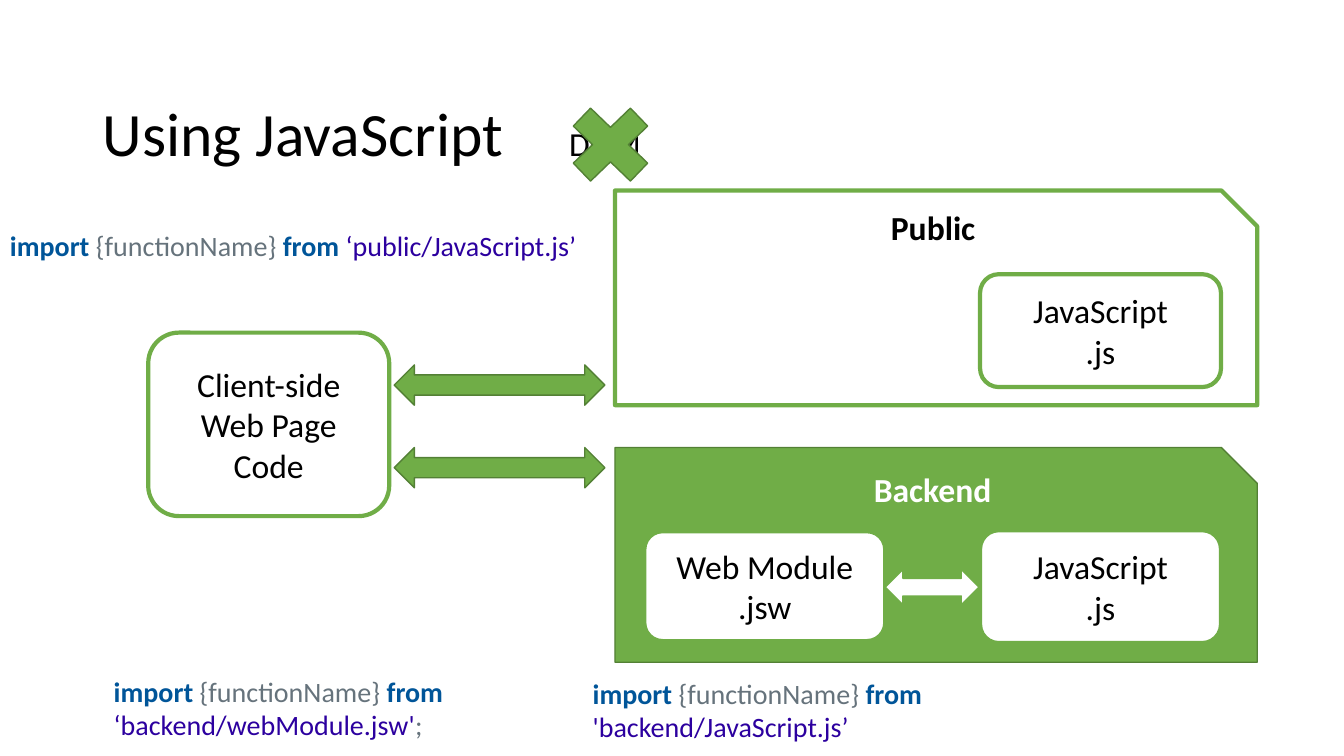
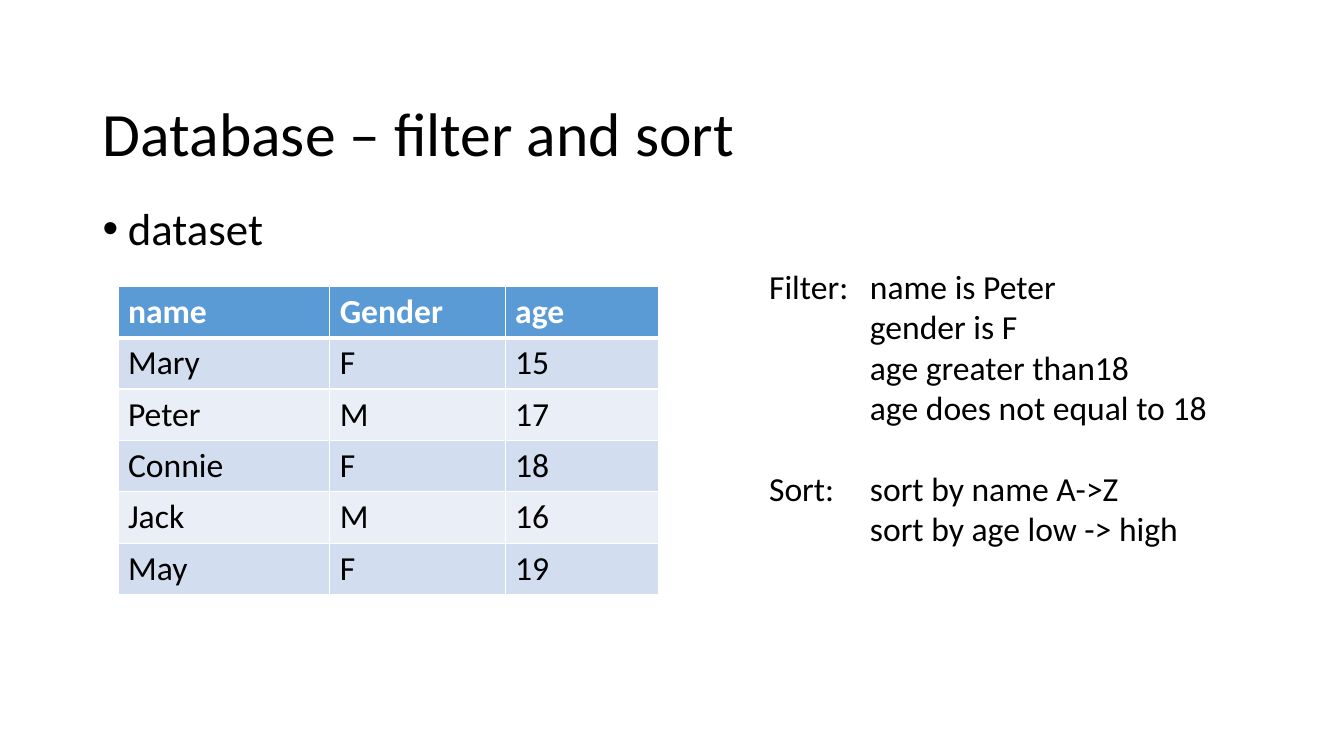
from lxml.etree import SubElement
from pptx import Presentation
from pptx.dml.color import RGBColor
from pptx.enum.shapes import MSO_SHAPE
from pptx.enum.text import MSO_ANCHOR, MSO_AUTO_SIZE, PP_ALIGN
from pptx.oxml.ns import qn
from pptx.util import Inches, Pt

FONT = "Calibri"
BLACK = RGBColor(0x00, 0x00, 0x00)
WHITE = RGBColor(0xFF, 0xFF, 0xFF)
GREEN = RGBColor(0x70, 0xAD, 0x47)
DARK_GREEN = RGBColor(0x53, 0x80, 0x35)
BLUE = RGBColor(0x5B, 0x9B, 0xD5)
PALE_BLUES = (RGBColor(0xD2, 0xDE, 0xEF), RGBColor(0xEA, 0xEF, 0xF7))
KEYWORD = RGBColor(0x00, 0x55, 0x99)
IDENTIFIER = RGBColor(0x66, 0x73, 0x7C)
STRING = RGBColor(0x2C, 0x00, 0x9F)

DATASET = [
    ("name", "Gender", "age"),
    ("Mary", "F", "15"),
    ("Peter", "M", "17"),
    ("Connie", "F", "18"),
    ("Jack", "M", "16"),
    ("May", "F", "19"),
]
RULES = {
    "Filter:": ["name is Peter", "gender is F", "age greater than18", "age does not equal to 18"],
    "Sort:": ["sort by name A->Z", "sort by age low -> high"],
}


def add_span(para, text, size=24, color=BLACK, bold=False):
    span = para.add_run()
    span.text = text
    span.font.name = FONT
    span.font.size = Pt(size)
    span.font.color.rgb = color
    span.font.bold = bold


def add_titled_page(deck, title):
    page = deck.slides.add_slide(deck.slide_layouts[5])
    box = page.shapes.title
    box.left, box.top, box.width, box.height = map(Inches, (0.92, 0.7, 11.5, 1.3))
    frame = box.text_frame
    frame.auto_size = MSO_AUTO_SIZE.NONE
    frame.vertical_anchor = MSO_ANCHOR.MIDDLE
    para = frame.paragraphs[0]
    para.alignment = PP_ALIGN.LEFT
    para.line_spacing = 0.9
    add_span(para, title, 44)
    return page


def add_text_box(page, left, top, width, height, wrap=True):
    box = page.shapes.add_textbox(*map(Inches, (left, top, width, height)))
    box.text_frame.word_wrap = wrap
    return box.text_frame


def add_label(page, text, left, top, width, color=BLACK, bold=True):
    para = add_text_box(page, left, top, width, 0.5, wrap=False).paragraphs[0]
    para.alignment = PP_ALIGN.CENTER
    add_span(para, text, color=color, bold=bold)


def add_import(page, source, left, top, width, height, ending=""):
    para = add_text_box(page, left, top, width, height).paragraphs[0]
    add_span(para, "import", 20, KEYWORD, True)
    add_span(para, " {functionName} ", 20, IDENTIFIER)
    add_span(para, "from ", 20, KEYWORD, True)
    add_span(para, source, 20, STRING)
    if ending:
        add_span(para, ending, 20, IDENTIFIER)


def add_figure(page, kind, left, top, width, height, fill=GREEN, line=DARK_GREEN, weight=1):
    figure = page.shapes.add_shape(kind, *map(Inches, (left, top, width, height)))
    figure.shadow.inherit = False
    figure.fill.solid()
    figure.fill.fore_color.rgb = fill
    figure.line.color.rgb = line
    figure.line.width = Pt(weight)
    return figure


def add_module(page, lines, left, top, height):
    module = add_figure(page, MSO_SHAPE.ROUNDED_RECTANGLE, left, top, 2.39, height, WHITE, GREEN, 3)
    frame = module.text_frame
    frame.vertical_anchor = MSO_ANCHOR.MIDDLE
    for index, text in enumerate(lines):
        para = frame.add_paragraph() if index else frame.paragraphs[0]
        para.alignment = PP_ALIGN.CENTER
        add_span(para, text)


def add_folder(page, top, **style):
    folder = add_figure(page, MSO_SHAPE.SNIP_ROUND_RECTANGLE, 6.1, top, 6.37, 2.13, **style)
    folder.adjustments[0] = 0
    folder.adjustments[1] = 0.167


def indent(para, margin, first):
    properties = para._p.get_or_add_pPr()
    properties.set("marL", str(Inches(margin)))
    properties.set("indent", str(Inches(first)))
    return properties


def add_bullet(page, text):
    para = add_text_box(page, 0.92, 2, 11.5, 0.7).paragraphs[0]
    para.line_spacing = 0.9
    properties = indent(para, 0.25, -0.25)
    SubElement(properties, qn("a:buFont"), typeface="Arial")
    SubElement(properties, qn("a:buChar"), char="•")
    add_span(para, text, 32)


def add_rules(page, rules):
    frame = add_text_box(page, 7.53, 2.59, 5.53, 2.93)
    for group, (heading, lines) in enumerate(rules.items()):
        for index, text in enumerate(lines):
            para = frame.add_paragraph() if group or index else frame.paragraphs[0]
            indent(para, 1, 0 if index else -1)
            if group and not index:
                para.space_before = Pt(29)
            add_span(para, text if index else f"{heading}\t{text}")


def set_borders(cell, bottom):
    properties = cell._tc.get_or_add_tcPr()
    for index, (side, weight) in enumerate((("L", 1), ("R", 1), ("T", 1), ("B", bottom))):
        border = properties.makeelement(qn(f"a:ln{side}"), {"w": str(Pt(weight))})
        properties.insert(index, border)
        fill = SubElement(border, qn("a:solidFill"))
        SubElement(fill, qn("a:srgbClr"), val=str(WHITE))


def add_dataset(page, rows):
    widths = (2.1, 1.74, 1.52)
    height = 0.51
    size = map(Inches, (1.17, 2.84, sum(widths), height * len(rows)))
    table = page.shapes.add_table(len(rows), len(widths), *size).table
    for column, width in zip(table.columns, widths):
        column.width = Inches(width)
    for row_index, values in enumerate(rows):
        table.rows[row_index].height = Inches(height)
        header = row_index == 0
        for column_index, text in enumerate(values):
            cell = table.cell(row_index, column_index)
            cell.fill.solid()
            cell.fill.fore_color.rgb = BLUE if header else PALE_BLUES[(row_index - 1) % 2]
            set_borders(cell, 3 if header else 1)
            add_span(cell.text_frame.paragraphs[0], text, color=WHITE if header else BLACK, bold=header)


def build_javascript_page(deck):
    page = add_titled_page(deck, "Using JavaScript")
    add_import(page, "‘backend/webModule.jsw'", 1.03, 6.64, 3.67, 0.77, ";")
    add_import(page, "'backend/JavaScript.js’", 5.78, 6.66, 3.6, 0.77)
    add_import(page, "‘public/JavaScript.js’", 0, 2.22, 5.92, 0.44)
    add_module(page, ("Client-side", "Web Page Code"), 1.47, 3.3, 1.82)
    add_folder(page, 4.44)
    add_folder(page, 1.89, fill=WHITE, line=GREEN, weight=3)
    add_label(page, "Public", 8.73, 2, 1.05)
    add_label(page, "Backend", 8.56, 4.6, 1.38, WHITE)
    add_module(page, ("Web Module", ".jsw"), 6.39, 5.27, 1.09)
    for top in (2.72, 5.26):
        add_module(page, ("JavaScript", ".js"), 9.72, top, 1.12)
    for top in (3.62, 4.44):
        add_figure(page, MSO_SHAPE.LEFT_RIGHT_ARROW, 3.91, top, 2.09, 0.4)
    add_figure(page, MSO_SHAPE.LEFT_RIGHT_ARROW, 8.78, 5.65, 0.93, 0.35, WHITE, GREEN)
    add_label(page, "DOM", 5.54, 1.17, 0.92, bold=False)
    add_figure(page, MSO_SHAPE.MATH_MULTIPLY, 5.51, 0.91, 1.09, 1.05)


def build_database_page(deck):
    page = add_titled_page(deck, "Database – filter and sort")
    add_bullet(page, "dataset")
    add_dataset(page, DATASET)
    add_rules(page, RULES)


def main():
    deck = Presentation()
    deck.slide_width = Inches(13.33)
    deck.slide_height = Inches(7.5)
    build_javascript_page(deck)
    build_database_page(deck)
    deck.save("out.pptx")


if __name__ == "__main__":
    main()
